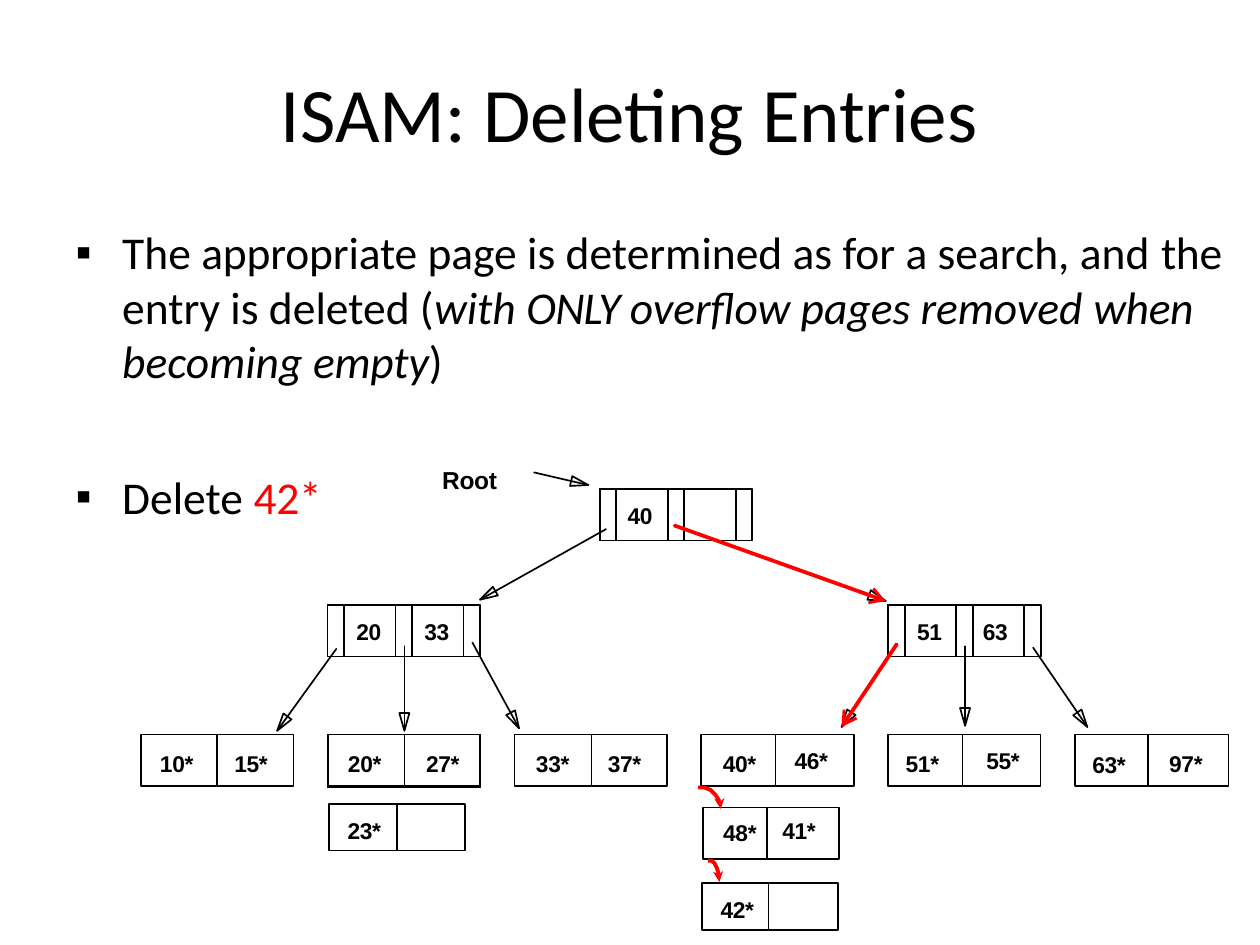
from dataclasses import dataclass
from math import hypot

from lxml.etree import SubElement
from pptx import Presentation
from pptx.dml.color import RGBColor
from pptx.enum.shapes import MSO_SHAPE
from pptx.enum.text import MSO_ANCHOR, PP_ALIGN
from pptx.oxml.ns import qn
from pptx.util import Pt

PX = 9144


@dataclass(frozen=True)
class Theme:
    ink: RGBColor = RGBColor(0, 0, 0)
    red: RGBColor = RGBColor(255, 0, 0)
    body: str = "Calibri"
    label: str = "Arial"
    title: int = 44
    text: int = 26
    root: int = 14
    key: int = 13
    thin: float = 0.96
    bold: float = 2.2


THEME = Theme()
KEY = {"name": THEME.label, "size": Pt(THEME.key), "bold": True}
ROOT = {**KEY, "size": Pt(THEME.root)}
TITLE = {"name": THEME.body, "size": Pt(THEME.title)}
TEXT = {"name": THEME.body, "size": Pt(THEME.text)}
SLANT = {**TEXT, "italic": True}


def px(*vals):
    return [round(val * PX) for val in vals]


def apply(item, values):
    for name, value in values.items():
        setattr(item, name, value)


def write(shape, runs, left=0, top=0):
    frame = shape.text_frame
    apply(frame, {
        "word_wrap": True, "vertical_anchor": MSO_ANCHOR.TOP,
        "margin_left": left * PX, "margin_top": top * PX,
        "margin_right": 0, "margin_bottom": 0,
    })
    para = frame.paragraphs[0]
    para.alignment = PP_ALIGN.LEFT
    for text, font, track, color in runs:
        run = para.add_run()
        run.text = text
        apply(run.font, font)
        run.font.color.rgb = color
        run._r.get_or_add_rPr().set("spc", str(track))
    return para


def label(slide, box, runs, left=0, top=0):
    return write(slide.shapes.add_textbox(*px(*box)), runs, left, top)


def bullet(slide, box, runs, top):
    props = label(slide, box, runs, top=top)._p.get_or_add_pPr()
    props.set("marL", str(38 * PX))
    props.set("indent", str(-37 * PX))
    SubElement(props, qn("a:buFont")).set("typeface", THEME.label)
    SubElement(props, qn("a:buChar")).set("char", "▪")


def outline(shape, color, width):
    shape.line.color.rgb = color
    shape.line.width = Pt(width)


def paint(shape, color):
    shape.fill.solid()
    shape.fill.fore_color.rgb = color
    shape.line.fill.background()


def draw(slide, paths, close=True):
    maker = slide.shapes.build_freeform(*px(*paths[0][0]))
    for index, points in enumerate(paths):
        first, *rest = [px(*point) for point in points]
        if index:
            maker.move_to(*first)
        maker.add_line_segments(rest, close=close)
    form = maker.convert_to_shape()
    form.shadow.inherit = False
    form.fill.background()
    return form


def along(ends, points):
    x1, y1, x2, y2 = ends
    size = hypot(x2 - x1, y2 - y1)
    dx, dy = (x2 - x1) / size, (y2 - y1) / size
    return [(x2 - back * dx - side * dy, y2 - back * dy + side * dx)
            for back, side in points]


def thin(ends):
    x1, y1, x2, y2 = ends
    return [[(x1, y1), (x2, y2)], along(ends, [(0, 0), (14, 4), (14, -4)])]


def thick(ends):
    x1, y1, x2, y2 = ends
    size = hypot(x2 - x1, y2 - y1)
    half = [(12, 7), (13, 5), (7, 1.5), (size, 1.5)]
    other = [(back, -side) for back, side in reversed(half)]
    return along(ends, [(0, 0), *half, *other])


def frame(x, y, width, height):
    return [(x, y), (x + width, y), (x + width, y + height), (x, y + height)]


def hook(slide, x, y, width):
    curve = [(1, 17), (0.72, 17), (0.44, 15), (0.22, 11), (0.05, 6)]
    bend = draw(slide, [[(x - part * width, y - rise) for part, rise in curve]], False)
    outline(bend, THEME.red, THEME.bold)
    tip = [(-5, -8), (0, 0), (3, -9), (0, -6)]
    paint(draw(slide, [[(x + dx, y + dy) for dx, dy in tip]]), THEME.red)


def cells(slide, x, y, height, parts):
    for width, text, left, top in parts:
        cell = slide.shapes.add_shape(MSO_SHAPE.RECTANGLE, *px(x, y, width, height))
        cell.shadow.inherit = False
        cell.fill.background()
        outline(cell, THEME.ink, THEME.thin)
        if text:
            write(cell, [(text, KEY, -20, THEME.ink)], left, top)
        x += width


def node(slide, x, y, keys):
    gap = (13, "", 0, 0)
    parts = [gap]
    for text, left in keys:
        parts += [(41, text, left, 10), gap]
    cells(slide, x, y, 41, parts)


def tree(slide, x, y):
    nodes = [
        (376, 28, [("40", 9), ("", 0)]),
        (160, 120, [("20", 10), ("33", 10)]),
        (605, 120, [("51", 10), ("63", 8)]),
    ]
    search = [(435, 57, 603, 117), (612, 151, 568, 217)]
    links = [
        (324, 15, 367, 25), (381, 60, 281, 116),
        (167, 155, 120, 220), (221, 153, 221, 220), (275, 150, 312, 218),
        (666, 153, 666, 216), (720, 154, 763, 217),
    ]
    moved = [(x + a, y + b, x + c, y + d) for a, b, c, d in links + search]
    paths = [frame(x + dx, y + dy, 121, 41) for dx, dy, _ in nodes]
    paths.append(frame(x + 160, y + 223, 121, 42))
    for ends in moved:
        paths += thin(ends)
    outline(draw(slide, paths), THEME.ink, THEME.thin)

    leaves = [
        [(60, "10*", 15, 12), (61, "15*", 14, 12)],
        [(61, "20*", 16, 12), (60, "27*", 17, 12)],
        [(61, "33*", 17, 12), (60, "37*", 13, 12)],
        [(59, "40*", 17, 12), (62, "46*", 15, 10)],
        [(59, "51*", 14, 12), (62, "55*", 19, 10)],
        [(58, "63*", 14, 13), (64, "97*", 17, 12)],
    ]
    for col, parts in enumerate(leaves):
        cells(slide, x + 12 + 148.2 * col, y + 223, 41, parts)
    for dx, dy, keys in nodes:
        node(slide, x + dx, y + dy, keys)
    label(slide, (x + 250, y + 8, 47, 26), [("Root", ROOT, -20, THEME.ink)], 1, 1)
    paint(draw(slide, [thick(ends) for ends in moved[-len(search):]]), THEME.red)

    spills = [
        (161, 278, 37, [(54, "23*", 15, 10), (54, "", 0, 0)]),
        (458, 281, 41, [(51, "48*", 16, 9), (57, "41*", 12, 7)]),
        (457, 341, 37, [(53, "42*", 15, 10), (55, "", 0, 0)]),
    ]
    for dx, dy, height, parts in spills:
        cells(slide, x + dx, y + dy, height, parts)
    for dx, dy, width in [(472, 282, 18), (471, 340, 9)]:
        hook(slide, x + dx, y + dy, width)


def main():
    deck = Presentation()
    deck.slide_width, deck.slide_height = px(1000, 750)
    slide = deck.slides.add_slide(deck.slide_layouts[6])
    ink = THEME.ink
    label(slide, (73, 37, 854, 90), [
        ("ISAM: Deleting ", TITLE, 0, ink), ("Entries", TITLE, -10, ink),
    ], 150, 15)
    bullet(slide, (59, 176, 918, 133), [
        ("The ", TEXT, 0, ink),
        ("appropriate ", TEXT, -10, ink),
        ("page is determined as for a search, and ", TEXT, 0, ink),
        ("the ", TEXT, -20, ink),
        ("entry is deleted (", TEXT, 0, ink),
        ("with ", SLANT, 0, ink),
        ("ONLY ", SLANT, -50, ink),
        ("overflow pages removed ", SLANT, 0, ink),
        ("when ", SLANT, -20, ink),
        ("becoming ", SLANT, 0, ink),
        ("empty", SLANT, -10, ink),
        (")", TEXT, -10, ink),
    ], 2)
    bullet(slide, (59, 371, 199, 46), [
        ("Delete ", TEXT, 0, ink), ("42*", TEXT, -20, THEME.red),
    ], 1)
    tree(slide, 100, 360)
    deck.save("out.pptx")


if __name__ == "__main__":
    main()
